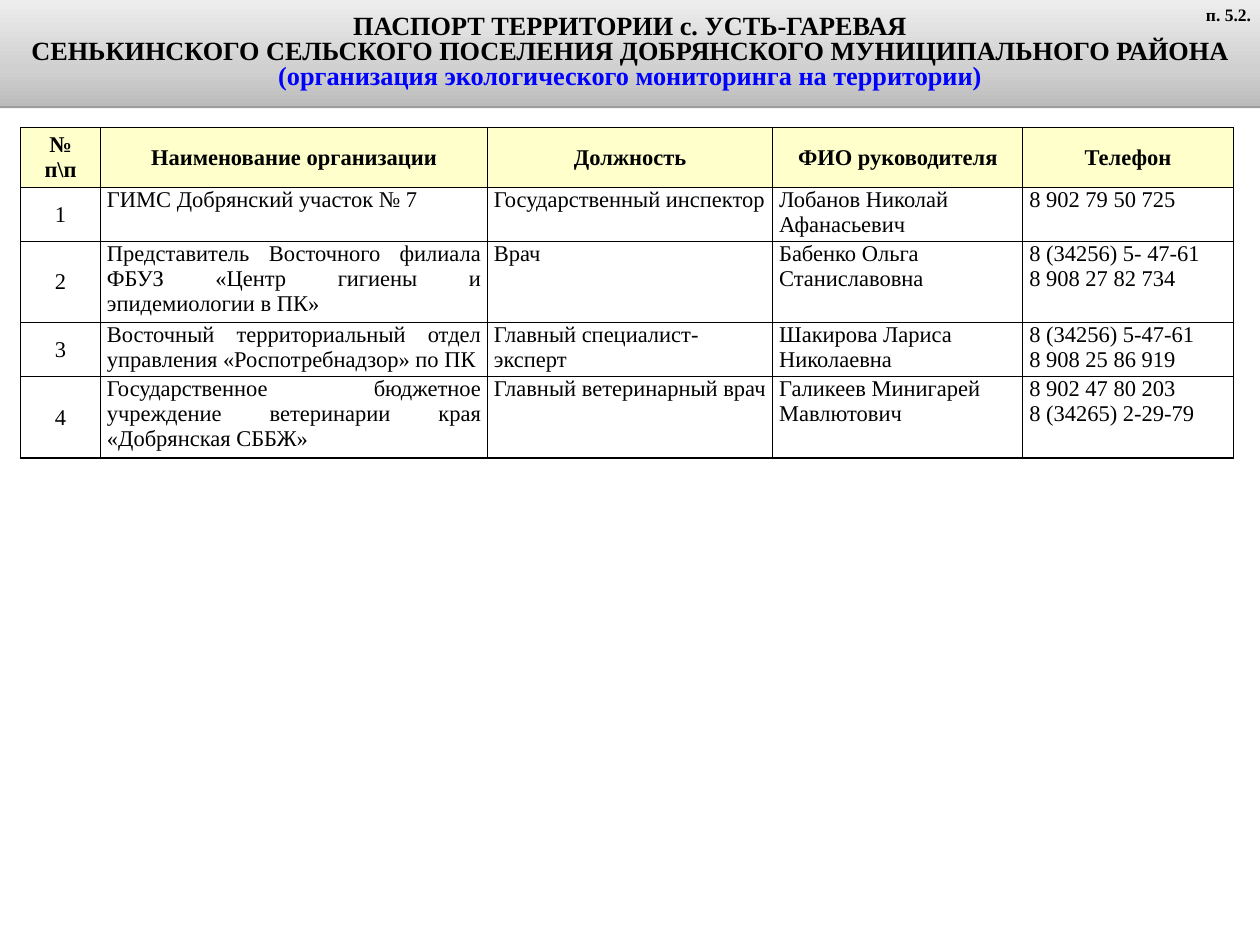
from dataclasses import dataclass

from lxml import etree
from pptx import Presentation
from pptx.dml.color import RGBColor
from pptx.enum import text
from pptx.oxml import parse_xml
from pptx.oxml.ns import nsdecls, qn
from pptx.util import Cm, Pt

FONT = "Times New Roman"
COLORS = {
    "black": "000000",
    "blue": "0000FF",
    "header": "FFFFCC",
    "body": "FFFFFF",
    "gradient_bottom": "BCBCBC",
    "gradient_middle": "D0D0D0",
    "gradient_top": "EDEDED",
}
TITLE_LINES = [
    ("ПАСПОРТ ТЕРРИТОРИИ с. УСТЬ-ГАРЕВАЯ", "black"),
    ("СЕНЬКИНСКОГО СЕЛЬСКОГО ПОСЕЛЕНИЯ ДОБРЯНСКОГО МУНИЦИПАЛЬНОГО РАЙОНА", "black"),
    ("(организация экологического мониторинга на территории)", "blue"),
]
COLUMN_WIDTHS = [2.26, 10.92, 8.05, 7.06, 5.93]
ROW_HEIGHTS = [1.65, 1.52, 2.29, 1.52, 2.29]
HEADINGS = ["№\nп\\п", "Наименование организации", "Должность", "ФИО руководителя", "Телефон"]


@dataclass
class Contact:
    organization: str
    position: str
    name: str
    phones: str


@dataclass
class CellStyle:
    fill: str
    alignment: text.PP_ALIGN
    bold: bool = False
    centered: bool = True


CONTACTS = [
    Contact("ГИМС Добрянский участок № 7", "Государственный инспектор",
            "Лобанов Николай Афанасьевич", "8 902 79 50 725"),
    Contact("Представитель Восточного филиала ФБУЗ «Центр гигиены и эпидемиологии в ПК»",
            "Врач", "Бабенко Ольга Станиславовна", "8 (34256) 5- 47-61\n8 908 27 82 734"),
    Contact("Восточный территориальный отдел управления «Роспотребнадзор» по ПК",
            "Главный специалист-эксперт", "Шакирова Лариса Николаевна",
            "8 (34256) 5-47-61\n8 908 25 86 919"),
    Contact("Государственное бюджетное учреждение ветеринарии края «Добрянская СББЖ»",
            "Главный ветеринарный врач", "Галикеев Минигарей Мавлютович",
            "8 902 47 80 203\n8 (34265) 2-29-79"),
]
HEADER_STYLE = CellStyle("header", text.PP_ALIGN.CENTER, bold=True)
NUMBER_STYLE = CellStyle("body", text.PP_ALIGN.CENTER)
ORGANIZATION_STYLE = CellStyle("body", text.PP_ALIGN.JUSTIFY, centered=False)
DETAIL_STYLE = CellStyle("body", text.PP_ALIGN.LEFT, centered=False)
ROW_STYLES = [NUMBER_STYLE, ORGANIZATION_STYLE] + [DETAIL_STYLE] * 3


def format_paragraph(paragraph, size: float, alignment, color: str = "black",
                     bold: bool = True) -> None:
    paragraph.alignment = alignment
    for run in paragraph.runs:
        run.font.name = FONT
        run.font.size = Pt(size)
        run.font.bold = bold
        run.font.color.rgb = RGBColor.from_string(COLORS[color])


def add_gradient_and_shadow(shape) -> None:
    stops = [(0, "gradient_bottom"), (35, "gradient_middle"), (100, "gradient_top")]
    stop_xml = "".join(
        f'<a:gs pos="{position * 1000}"><a:srgbClr val="{COLORS[color]}"/></a:gs>'
        for position, color in stops)
    properties = shape._element.spPr
    properties.append(parse_xml(
        f'<a:gradFill {nsdecls("a")} rotWithShape="1"><a:gsLst>{stop_xml}</a:gsLst>'
        '<a:lin ang="16200000" scaled="1"/></a:gradFill>'))
    properties.append(parse_xml(
        f'<a:effectLst {nsdecls("a")}><a:outerShdw blurRad="0" dist="{Pt(1.6)}" dir="5400000" '
        f'rotWithShape="0"><a:srgbClr val="{COLORS["black"]}"><a:alpha val="38000"/>'
        '</a:srgbClr></a:outerShdw></a:effectLst>'))


def add_title(slide) -> None:
    title = slide.shapes.title
    title.left, title.top, title.width, title.height = Cm(0), Cm(0), Cm(35.56), Cm(3)
    add_gradient_and_shadow(title)
    frame = title.text_frame
    frame.text = "\n".join(line for line, _ in TITLE_LINES)
    frame.word_wrap = True
    frame.auto_size = text.MSO_AUTO_SIZE.NONE
    frame.vertical_anchor = text.MSO_ANCHOR.MIDDLE
    for paragraph, (_, color) in zip(frame.paragraphs, TITLE_LINES):
        format_paragraph(paragraph, 21, text.PP_ALIGN.CENTER, color)
        paragraph.line_spacing = 0.8
        paragraph.space_before = Pt(0)


def add_section_number(slide) -> None:
    box = slide.shapes.add_textbox(Cm(33.17), Cm(0), Cm(2.39), Cm(0.84))
    box.text_frame.word_wrap = True
    box.text_frame.text = "п. 5.2."
    format_paragraph(box.text_frame.paragraphs[0], 14, text.PP_ALIGN.RIGHT)


def add_borders(cell) -> None:
    properties = cell._tc.get_or_add_tcPr()
    for index, side in enumerate(("lnL", "lnR", "lnT", "lnB")):
        line = etree.Element(qn(f"a:{side}"), w=str(Pt(1)))
        fill = etree.SubElement(line, qn("a:solidFill"))
        etree.SubElement(fill, qn("a:srgbClr"), val=COLORS["black"])
        properties.insert(index, line)


def fill_cell(cell, content: str, style: CellStyle) -> None:
    cell.text_frame.text = content
    cell.fill.solid()
    cell.fill.fore_color.rgb = RGBColor.from_string(COLORS[style.fill])
    cell.margin_left = cell.margin_right = Cm(0.08 if style.centered else 0.18)
    cell.margin_top = cell.margin_bottom = Cm(0.08 if style.centered else 0)
    cell.vertical_anchor = text.MSO_ANCHOR.MIDDLE if style.centered else text.MSO_ANCHOR.TOP
    for paragraph in cell.text_frame.paragraphs:
        format_paragraph(paragraph, 18, style.alignment, bold=style.bold)
    add_borders(cell)


def add_contact_table(slide) -> None:
    table = slide.shapes.add_table(
        len(ROW_HEIGHTS), len(COLUMN_WIDTHS), Cm(0.58), Cm(3.61),
        Cm(sum(COLUMN_WIDTHS)), Cm(sum(ROW_HEIGHTS))).table
    table.first_row = table.horz_banding = False
    for column, width in zip(table.columns, COLUMN_WIDTHS):
        column.width = Cm(width)
    for row, height in zip(table.rows, ROW_HEIGHTS):
        row.height = Cm(height)
    for cell, heading in zip(table.rows[0].cells, HEADINGS):
        fill_cell(cell, heading, HEADER_STYLE)
    for number, contact in enumerate(CONTACTS, start=1):
        values = [str(number), contact.organization, contact.position,
                  contact.name, contact.phones]
        for cell, value, style in zip(table.rows[number].cells, values, ROW_STYLES):
            fill_cell(cell, value, style)


def main() -> None:
    presentation = Presentation()
    presentation.slide_width, presentation.slide_height = Cm(35.56), Cm(26.67)
    slide = presentation.slides.add_slide(presentation.slide_layouts[5])
    add_title(slide)
    add_section_number(slide)
    add_contact_table(slide)
    presentation.save("out.pptx")


if __name__ == "__main__":
    main()
